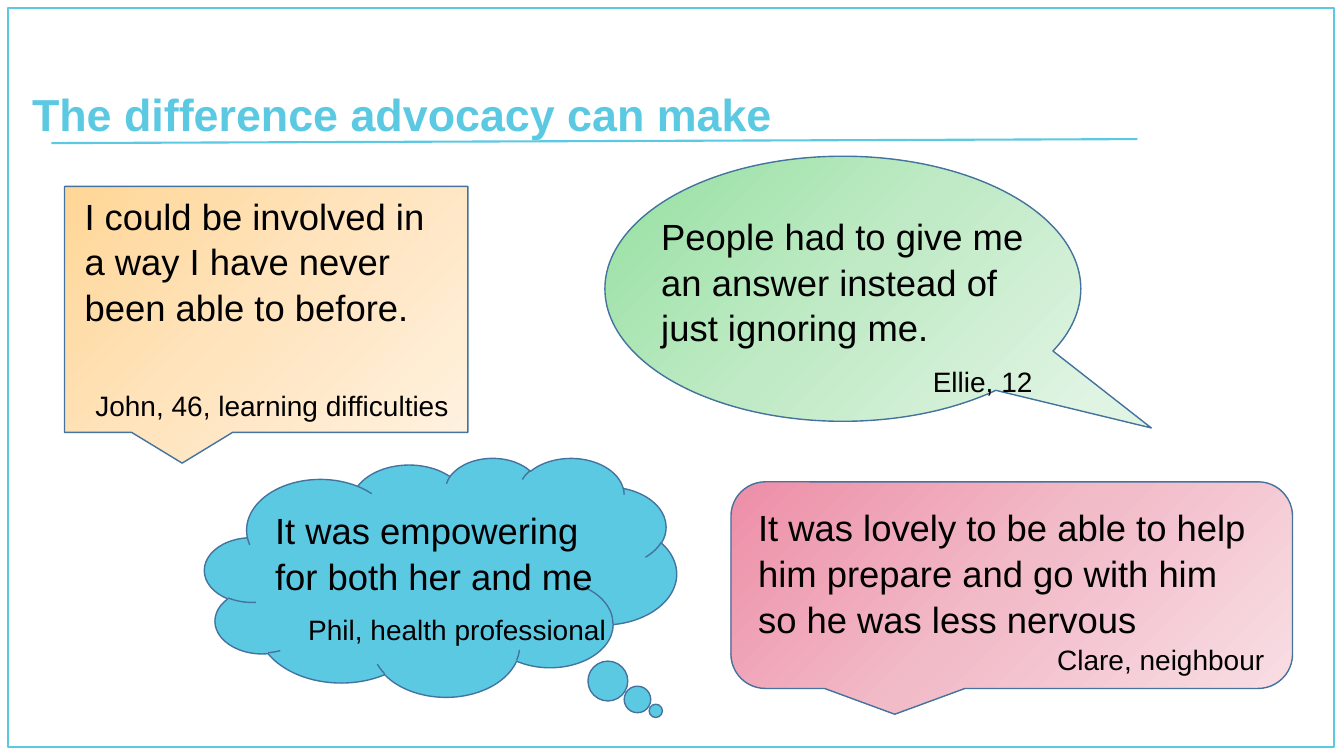
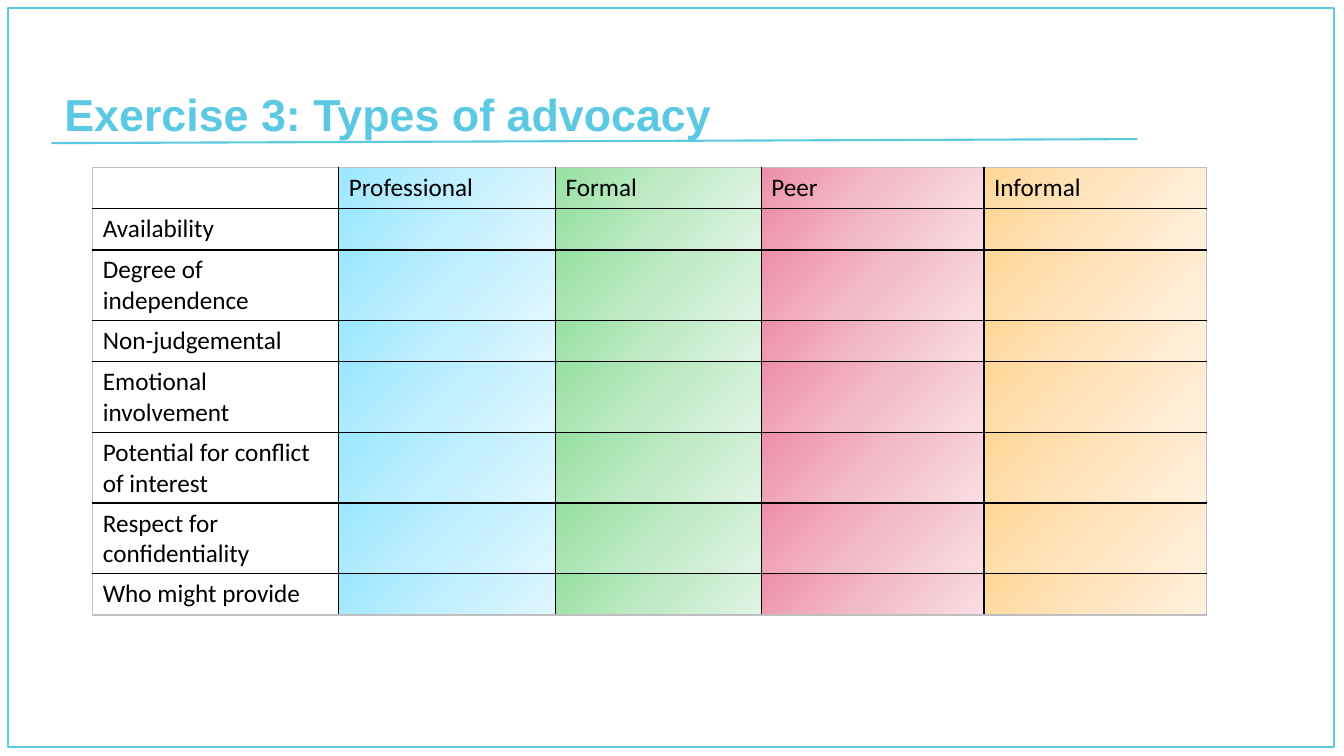
"""Two slides on advocacy: quotes in callouts and a table to fill in."""
from copy import deepcopy

from lxml import etree
from pptx import Presentation
from pptx.dml.color import RGBColor
from pptx.enum import shapes, text
from pptx.oxml.ns import qn
from pptx.util import Inches, Pt

AQUA = RGBColor(0x5C, 0xC9, 0xE3)
OUTLINE = RGBColor(0x43, 0x73, 0x9E)
BLACK = RGBColor(0, 0, 0)
GREY = RGBColor(0xBF, 0xBF, 0xBF)
BLUE_FADE = [RGBColor.from_string(c) for c in ("9AE7FF", "C0EFFF", "E0F6FE")]
GREEN_FADE = [RGBColor.from_string(c) for c in ("95E0A0", "BFEAC5", "E0F4E3")]
PINK_FADE = [RGBColor.from_string(c) for c in ("ED8EA7", "F2BBC8", "F8DEE4")]
ORANGE_FADE = [RGBColor.from_string(c) for c in ("FFD696", "FFE4BE", "FFF1DF")]

KIND = shapes.MSO_SHAPE
QUOTES = [
    dict(kind=KIND.RECTANGULAR_CALLOUT, at=(0.64, 1.85, 4, 2.44), tip=None, fade=ORANGE_FADE,
         box=(0.74, 1.85, 3.81, 2.32), gap=41,
         quote="I could be involved in a way I have never been able to before.",
         who="John, 46, learning difficulties"),
    dict(kind=KIND.OVAL_CALLOUT, at=(6, 1.55, 4.72, 2.63), tip=(0.648, 0.525), fade=GREEN_FADE,
         box=(6.46, 2.05, 3.88, 1.88), gap=9.6,
         quote="People had to give me an answer instead of just ignoring me.",
         who="Ellie, 12"),
    dict(kind=KIND.CLOUD_CALLOUT, at=(2.03, 4.54, 4.68, 2.37), tip=(0.456, 0.56), fade=None,
         box=(2.63, 4.97, 3.48, 1.45), gap=9.6,
         quote="It was empowering for both her and me",
         who="Phil, health professional"),
    dict(kind=KIND.ROUNDED_RECTANGULAR_CALLOUT, at=(7.25, 4.78, 5.57, 2.05), tip=None,
         fade=PINK_FADE, box=(7.42, 4.94, 5.22, 1.75), gap=0,
         quote="It was lovely to be able to help him prepare and go with him "
               "so he was less nervous",
         who="Clare, neighbour"),
]
COLUMNS = [("", 2.44, None), ("Professional", 2.15, BLUE_FADE), ("Formal", 2.04, GREEN_FADE),
           ("Peer", 2.21, PINK_FADE), ("Informal", 2.21, ORANGE_FADE)]
ASPECTS = ["Availability", "Degree of independence", "Non-judgemental", "Emotional involvement",
           "Potential for conflict of interest", "Respect for confidentiality",
           "Who might provide"]
ROW_HEIGHT = 0.41


def inches(values):
    return [Inches(v) for v in values]


def fade_fill(fill, element, colours):
    fill.gradient()
    fill.gradient_angle = 315
    stops = next(element.iter(qn("a:gsLst")))
    stops.insert(1, deepcopy(stops[0]))
    for i, (stop, colour) in enumerate(zip(fill.gradient_stops, colours)):
        stop.position = i / 2
        stop.color.rgb = colour


def add_outlined(s, kind, at, colour):
    sp = s.shapes.add_shape(kind, *inches(at))
    sp.shadow.inherit = False
    sp.fill.background()
    sp.line.color.rgb = colour
    sp.line.width = Pt(1)
    return sp


def add_text(s, at):
    tf = s.shapes.add_textbox(*inches(at)).text_frame
    tf.word_wrap = True
    return tf


def write(p, words, size, colour, spacing, bold=False):
    p.text = words
    p.line_spacing = spacing
    p.font.name = "Arial"
    p.font.size = Pt(size)
    p.font.bold = bold
    p.font.color.rgb = colour


def new_slide(prs, title, left):
    s = prs.slides.add_slide(prs.slide_layouts[6])
    rule = s.shapes.add_connector(shapes.MSO_CONNECTOR.STRAIGHT,
                                  *inches((0.51, 1.42, 11.28, 1.38)))
    rule.line.color.rgb = AQUA
    rule.line.width = Pt(1.5)
    etree.SubElement(rule._element.spPr, qn("a:effectLst"))
    add_outlined(s, KIND.RECTANGLE, (0.08, 0.08, 13.15, 7.33), AQUA)
    tf = add_text(s, (left, 0, 11.5, 1.45))
    tf.vertical_anchor = text.MSO_ANCHOR.BOTTOM
    write(tf.paragraphs[0], title, 32, AQUA, 0.9, bold=True)
    return s


def add_quote(s, item):
    sp = add_outlined(s, item["kind"], item["at"], OUTLINE)
    for i, value in enumerate(item["tip"] or ()):
        sp.adjustments[i] = value
    if item["fade"]:
        fade_fill(sp.fill, sp._element, item["fade"])
    else:
        sp.fill.solid()
        sp.fill.fore_color.rgb = AQUA
    tf = add_text(s, item["box"])
    tf.auto_size = text.MSO_AUTO_SIZE.SHAPE_TO_FIT_TEXT
    write(tf.paragraphs[0], item["quote"], 26, BLACK, 1.05)
    p = tf.add_paragraph()
    write(p, item["who"], 20, BLACK, 1.05)
    p.alignment = text.PP_ALIGN.RIGHT
    p.space_before = Pt(item["gap"])


def add_border(cell, side, colour):
    line = etree.SubElement(cell._tc.get_or_add_tcPr(), qn(f"a:ln{side}"), w=str(Pt(1)))
    fill = etree.SubElement(line, qn("a:solidFill"))
    etree.SubElement(fill, qn("a:srgbClr"), val=str(colour))


def add_aspects_table(s):
    rows, cols = len(ASPECTS) + 1, len(COLUMNS)
    width = sum(w for _, w, _ in COLUMNS)
    table = s.shapes.add_table(rows, cols, *inches((0.92, 1.66, width, rows * ROW_HEIGHT))).table
    table.first_row = table.horz_banding = False
    for row in table.rows:
        row.height = Inches(ROW_HEIGHT)
    for c, (heading, col_width, fade) in enumerate(COLUMNS):
        table.columns[c].width = Inches(col_width)
        for r in range(rows):
            cell = table.cell(r, c)
            outer = {"L": c == 0, "R": c == cols - 1, "T": r == 0, "B": r == rows - 1}
            for side, is_outer in outer.items():
                add_border(cell, side, GREY if is_outer else BLACK)
            if fade:
                fade_fill(cell.fill, cell._tc, fade)
            else:
                cell.fill.background()
            p = cell.text_frame.paragraphs[0]
            words = heading if r == 0 else ASPECTS[r - 1] if c == 0 else ""
            if words:
                p.text = words
            p.font.name = "Calibri"
            p.font.size = Pt(18)
            p.font.color.rgb = BLACK


def main():
    prs = Presentation()
    prs.slide_width, prs.slide_height = inches((13.33, 7.5))
    s = new_slide(prs, "The difference advocacy can make", 0.22)
    for item in QUOTES:
        add_quote(s, item)
    s = new_slide(prs, "Exercise 3: Types of advocacy", 0.54)
    add_aspects_table(s)
    prs.save("out.pptx")


if __name__ == "__main__":
    main()
